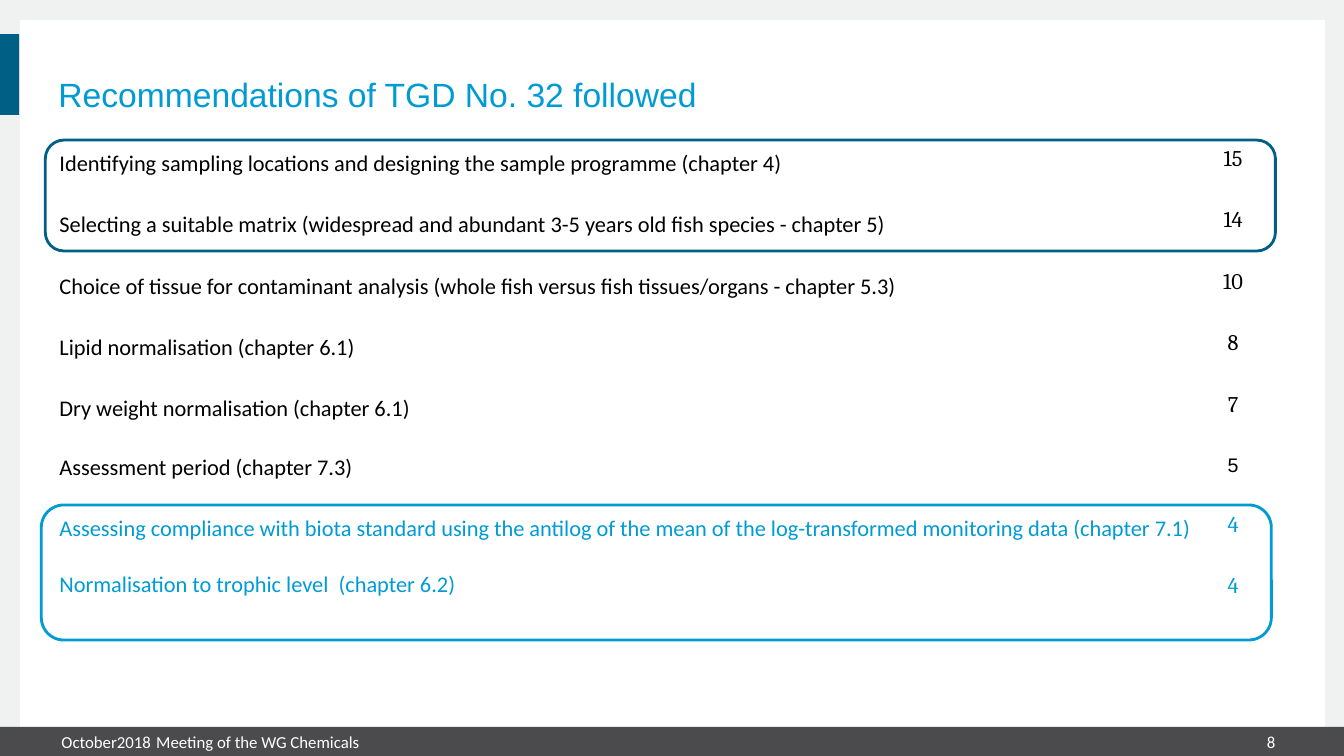
from pptx import Presentation
from pptx.dml.color import RGBColor
from pptx.enum.shapes import MSO_SHAPE as Shape
from pptx.enum.text import MSO_ANCHOR as Anchor, PP_ALIGN as Align
from pptx.util import Inches, Pt

THEME = {
    "blue": "009BD5", "navy": "005F85", "black": "000000", "white": "FFFFFF",
    "frame": "F0F1F1", "footer": "4B4B4D",
    "title_size": 24, "body_size": 16, "small_size": 14, "footer_size": 12,
    "title_font": "Arial", "body_font": "Calibri", "count_font": "Cambria",
}
TITLE = "Recommendations of TGD No. 32 followed"
RECOMMENDATIONS = [
    ("Identifying sampling locations and designing the sample programme (chapter 4)", "15"),
    ("Selecting a suitable matrix (widespread and abundant 3-5 years old fish species - chapter 5)", "14"),
    ("Choice of tissue for contaminant analysis (whole fish versus fish tissues/organs - chapter 5.3)", "10"),
    ("Lipid normalisation (chapter 6.1)", "8"),
    ("Dry weight normalisation (chapter 6.1)", "7"),
    ("Assessment period (chapter 7.3)", "5"),
    ("Assessing compliance with biota standard using the antilog of the mean of the "
     "log-transformed monitoring data (chapter 7.1)", "4"),
    ("Normalisation to trophic level  (chapter 6.2)", "4"),
]
SMALL_ROW = 5
FIRST_BLUE_ROW = 6
LAST_ROW = len(RECOMMENDATIONS) - 1
ROW_HEIGHTS = [0.36] + [0.61] * 4 + [0.58] + [0.61] * 2
COLUMN_WIDTHS = [11.34, 0.62]
PANELS = [
    ((0, 0, 13.33, 7.5), "frame"),
    ((0.2, 0.2, 12.94, 7.18), "white"),
    ((0, 7.21, 13.33, 0.29), "footer"),
    ((0, 0.34, 0.19, 0.8), "navy"),
]
FOOTERS = [
    ("October2018", 0.61, 0.94, Align.LEFT),
    ("Meeting of the WG Chemicals", 1.55, 9.8, Align.LEFT),
    ("8", 11.84, 0.81, Align.RIGHT),
]
HIGHLIGHTS = [
    ((0.45, 1.39, 12.2, 1.1), "navy"),
    ((0.41, 5.01, 12.2, 1.34), "blue"),
]


def color(name):
    return RGBColor.from_string(THEME[name])


def write(para, text, size, font, tone, align=Align.LEFT):
    para.alignment = align
    span = para.add_run()
    span.text = text
    span.font.size = Pt(THEME[size])
    span.font.name = THEME[font]
    span.font.color.rgb = color(tone)


def set_margins(target, left, top, right, bottom):
    target.margin_left, target.margin_top = Inches(left), Inches(top)
    target.margin_right, target.margin_bottom = Inches(right), Inches(bottom)


def add_text_box(page, place, anchor):
    frame = page.shapes.add_textbox(*map(Inches, place)).text_frame
    frame.word_wrap = True
    frame.vertical_anchor = anchor
    set_margins(frame, 0, 0, 0, 0)
    return frame.paragraphs[0]


def add_panel(page, place, tone):
    panel = page.shapes.add_shape(Shape.RECTANGLE, *map(Inches, place))
    panel.shadow.inherit = False
    panel.fill.solid()
    panel.fill.fore_color.rgb = color(tone)
    panel.line.fill.background()


def add_highlight(page, place, tone):
    box = page.shapes.add_shape(Shape.ROUNDED_RECTANGLE, *map(Inches, place))
    box.shadow.inherit = False
    box.fill.background()
    box.line.color.rgb = color(tone)
    box.line.width = Pt(2)


def add_recommendations(page):
    place = (0.58, 1.39, sum(COLUMN_WIDTHS), sum(ROW_HEIGHTS))
    table = page.shapes.add_table(
        len(RECOMMENDATIONS), len(COLUMN_WIDTHS), *map(Inches, place)).table
    table.first_row = False
    table.horz_banding = False
    for column, width in zip(table.columns, COLUMN_WIDTHS):
        column.width = Inches(width)
    for index, (topic, count) in enumerate(RECOMMENDATIONS):
        table.rows[index].height = Inches(ROW_HEIGHTS[index])
        tone = "blue" if index >= FIRST_BLUE_ROW else "black"
        topic_cell, count_cell = table.cell(index, 0), table.cell(index, 1)
        for cell in (topic_cell, count_cell):
            cell.fill.background()
            cell.vertical_anchor = Anchor.BOTTOM
        set_margins(topic_cell, 0.01, 0.01, 0.01, 0.06 if index == LAST_ROW else 0)
        set_margins(count_cell, 0.13, 0.05, 0.13, 0.05)
        write(topic_cell.text_frame.paragraphs[0], topic, "body_size", "body_font", tone)
        size, font = (("small_size", "title_font") if index == SMALL_ROW
                      else ("body_size", "count_font"))
        write(count_cell.text_frame.paragraphs[0], count, size, font, tone, Align.CENTER)


def main():
    deck = Presentation()
    deck.slide_width, deck.slide_height = Inches(13.33), Inches(7.5)
    page = deck.slides.add_slide(deck.slide_layouts[6])
    for place, tone in PANELS:
        add_panel(page, place, tone)
    heading = add_text_box(page, (0.58, 0.47, 12, 0.66), Anchor.BOTTOM)
    heading.line_spacing = Pt(22)
    write(heading, TITLE, "title_size", "title_font", "blue")
    for text, left, width, align in FOOTERS:
        para = add_text_box(page, (left, 7.21, width, 0.29), Anchor.MIDDLE)
        write(para, text, "footer_size", "body_font", "white", align)
    add_recommendations(page)
    for place, tone in HIGHLIGHTS:
        add_highlight(page, place, tone)
    deck.save("out.pptx")


if __name__ == "__main__":
    main()
